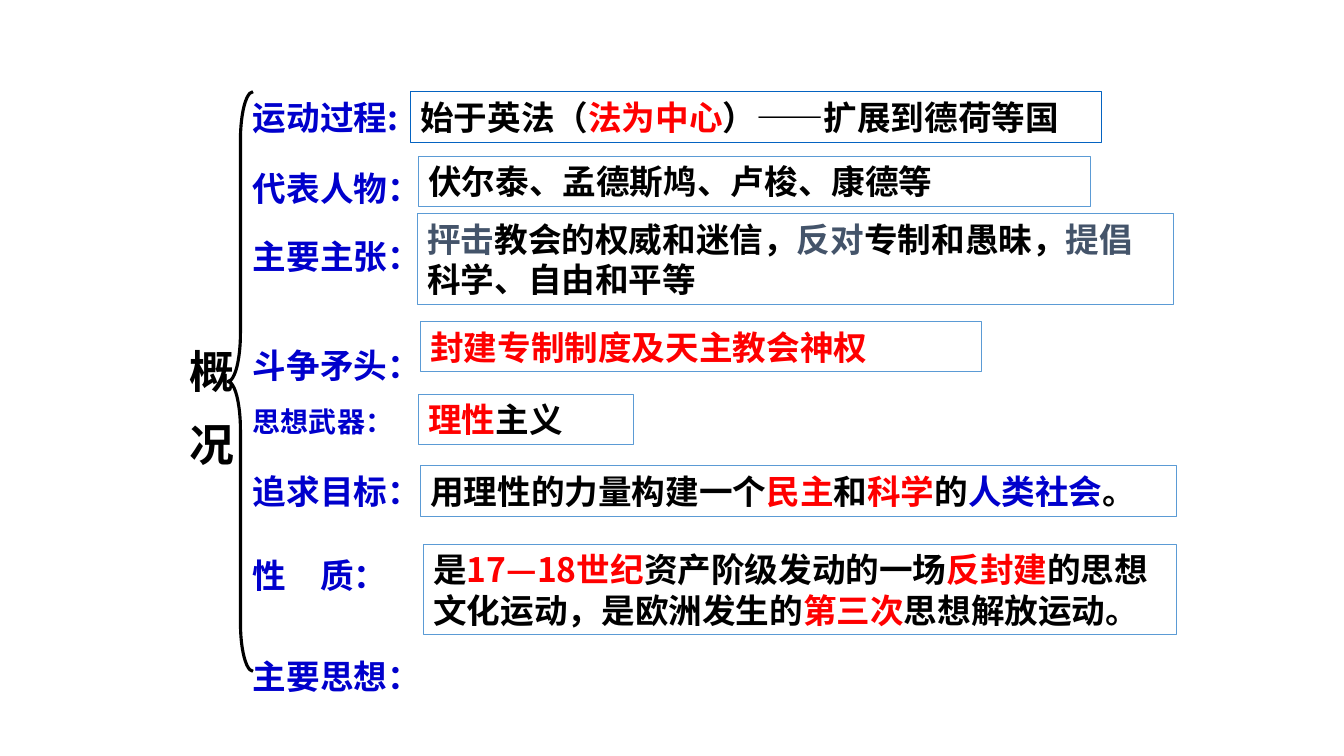
from lxml import etree
from pptx import Presentation
from pptx.dml.color import RGBColor
from pptx.enum.shapes import MSO_SHAPE as Preset
from pptx.enum.text import MSO_ANCHOR as Anchor, MSO_AUTO_SIZE as AutoSize, PP_ALIGN as Align
from pptx.oxml.ns import qn
from pptx.util import Inches, Pt

COLORS = {
    "ink": "000000",
    "label": "0000CC",
    "key": "FF0000",
    "verb": "44546A",
    "border": "5B9BD5",
    "first_border": "0563C1",
}
CJK = "Noto Sans CJK SC"
LABEL_LEFT = 2.41
LINE_HEIGHT = 0.4  # one 24 pt line
INSET = 0.05

# label: text, top, width, font, size
# answer: left, top, width, number of lines, font, runs of (text, colour)
ROWS = [
    (("运动过程:", 0.91, 1.71, CJK, 24),
     (4.07, 0.91, 6.85, 1, "Arial", [
         ("始于英法（", "ink"), ("法为中心", "key"), ("）——扩展到德荷等国", "ink")])),
    (("代表人物：", 1.62, 2.56, "Roboto", 24),
     (4.15, 1.55, 6.67, 1, "Roboto", [("伏尔泰、孟德斯鸠、卢梭、康德等", "ink")])),
    (("主要主张：", 2.29, 2.22, CJK, 24),
     (4.14, 2.12, 7.5, 2, "Arial", [
         ("抨击", "verb"), ("教会的权威和迷信，", "ink"), ("反对", "verb"),
         ("专制和愚昧，", "ink"), ("提倡", "verb"), ("科学、自由和平等", "ink")])),
    (("斗争矛头：", 3.37, 2.22, "Arial", 24),
     (4.17, 3.19, 5.57, 1, "Arial", [("封建专制制度及天主教会神权", "key")])),
    (("思想武器：", 3.96, 1.71, CJK, 20),
     (4.15, 3.91, 2.13, 1, "Arial", [("理性", "key"), ("主义", "ink")])),
    (("追求目标：", 4.62, 2.73, "Roboto", 24),
     (4.17, 4.62, 7.5, 1, "Roboto", [
         ("用理性的力量构建一个", "ink"), ("民主", "key"), ("和", "ink"),
         ("科学", "key"), ("的", "ink"), ("人类社会", "label"), ("。", "ink")])),
    (("性　质：", 5.46, 2.15, CJK, 24),
     (4.2, 5.4, 7.47, 2, "Noto Sans CJK JP", [
         ("是", "ink"), ("17—18世纪", "key"), ("资产阶级发动的一场", "ink"),
         ("反封建", "key"), ("的思想文化运动，是欧洲发生的", "ink"),
         ("第三次", "key"), ("思想解放运动。", "ink")])),
    (("主要思想：", 6.46, 2.99, "Roboto", 24), None),
]


def rgb(name):
    return RGBColor.from_string(COLORS[name])


def write(shape, runs, font_name, size, wrap=True):
    """Fill a shape with one left-aligned paragraph of bold coloured runs."""
    frame = shape.text_frame
    layout = {"word_wrap": wrap, "auto_size": AutoSize.SHAPE_TO_FIT_TEXT,
              "vertical_anchor": Anchor.TOP}
    for attribute, value in layout.items():
        setattr(frame, attribute, value)
    paragraph = frame.paragraphs[0]
    paragraph.alignment = Align.LEFT
    for text, color in runs:
        run = paragraph.add_run()
        run.text = text
        for attribute, value in {"size": Pt(size), "bold": True, "name": font_name}.items():
            setattr(run.font, attribute, value)
        run.font.color.rgb = rgb(color)
        east_asian = font_name if font_name.startswith("Noto") else CJK
        etree.SubElement(run.font._element, qn("a:ea")).set("typeface", east_asian)


def outlined(slide, preset, box, color, width):
    shape = slide.shapes.add_shape(preset, *map(Inches, box))
    shape.shadow.inherit = False
    shape.fill.background()
    shape.line.color.rgb = rgb(color)
    shape.line.width = Pt(width)
    return shape


def add_label(slide, text, top, width, font_name, size):
    height = LINE_HEIGHT * size / 24 + 2 * INSET
    label = slide.shapes.add_textbox(*map(Inches, (LABEL_LEFT, top, width, height)))
    write(label, [(text, "label")], font_name, size)


def add_answer(slide, border, left, top, width, lines, font_name, runs):
    box = (left, top, width, lines * LINE_HEIGHT + 2 * INSET)
    write(outlined(slide, Preset.RECTANGLE, box, *border), runs, font_name, 24)


def add_heading(slide, left, top, width, height):
    """Vertical heading and the brace that opens towards the rows."""
    brace = outlined(slide, Preset.LEFT_BRACE, (2.26, 0.91, 0.25, 5.75), "ink", 2.25)
    brace.adjustments[0] = 1.916
    heading = slide.shapes.add_textbox(*map(Inches, (left, top, width, height)))
    write(heading, [("概 ", "ink"), ("况", "ink")], "Roboto", 32)
    frame = heading.text_frame
    frame._txBody.bodyPr.set("vert", "eaVert")
    frame.paragraphs[0].runs[0].font._element.set("spc", "650")


def main():
    deck = Presentation()
    deck.slide_width, deck.slide_height = Inches(13.33), Inches(7.5)
    slide = deck.slides.add_slide(deck.slide_layouts[6])
    for index, (label, answer) in enumerate(ROWS):
        add_label(slide, *label)
        if answer:
            border = ("border", 0.75) if index else ("first_border", 0.25)
            add_answer(slide, border, *answer)
    add_heading(slide, 1.67, 3.36, 0.73, 1.42)
    deck.save("out.pptx")


if __name__ == "__main__":
    main()
